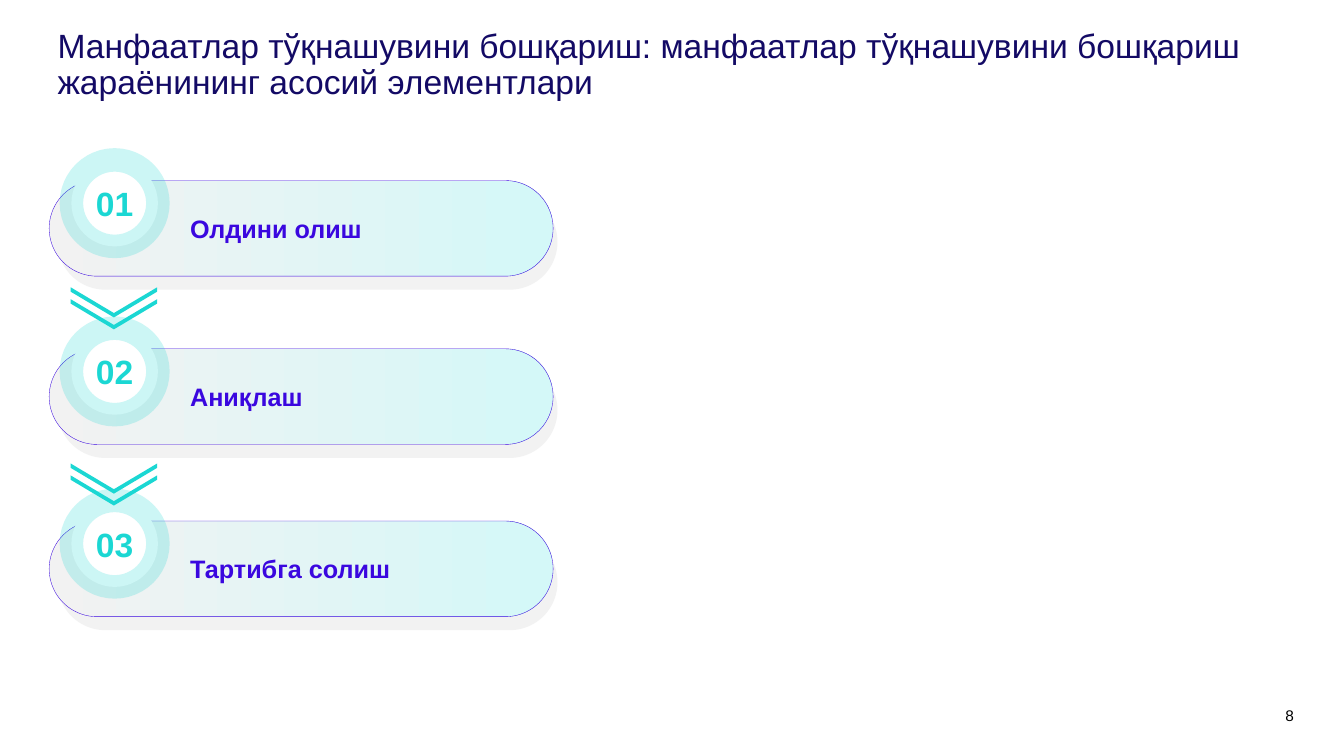
from lxml import etree
from pptx import Presentation
from pptx.dml.color import RGBColor
from pptx.enum.shapes import MSO_SHAPE
from pptx.enum.text import MSO_ANCHOR, MSO_AUTO_SIZE, PP_ALIGN
from pptx.oxml.ns import qn
from pptx.util import Cm, Pt

ROUNDED = MSO_SHAPE.ROUNDED_RECTANGLE
OVAL = MSO_SHAPE.OVAL
CHEVRON = MSO_SHAPE.CHEVRON
TOP, MIDDLE = MSO_ANCHOR.TOP, MSO_ANCHOR.MIDDLE
NO_AUTOFIT = MSO_AUTO_SIZE.NONE
LEFT, CENTER, RIGHT = PP_ALIGN.LEFT, PP_ALIGN.CENTER, PP_ALIGN.RIGHT

COLORS = {
    "navy": "130A65",
    "violet": "3A07DF",
    "teal": "1BD7D3",
    "aqua": "D4F8F8",
    "grey": "F2F2F2",
    "white": "FFFFFF",
    "black": "000000",
}
TITLE = ("Манфаатлар тўқнашувини бошқариш: манфаатлар тўқнашувини бошқариш "
         "жараёнининг асосий элементлари")
STEPS = [("Олдини олиш", 4.55), ("Аниқлаш", 8.79), ("Тартибга солиш", 13.13)]
ARROW_TOPS = [6.53, 10.97]
ARROW_GAP = 0.3
PILL_HEIGHT = 2.41
RING_SIZE = 2.18


def color(name):
    return RGBColor.from_string(COLORS[name])


class SlideBuilder:
    font_name = "Arial"

    def __init__(self, presentation):
        self.slide = presentation.slides.add_slide(presentation.slide_layouts[5])

    def set_text(self, shape, text, size, color_name, bold=False, align=LEFT,
                 anchor=MIDDLE, insets=(0, 0, 0, 0)):
        frame = shape.text_frame
        frame.text = text
        frame.word_wrap = True
        frame.auto_size = NO_AUTOFIT
        frame.vertical_anchor = anchor
        (frame.margin_left, frame.margin_top,
         frame.margin_right, frame.margin_bottom) = map(Cm, insets)
        paragraph = frame.paragraphs[0]
        paragraph.alignment = align
        font = paragraph.runs[0].font
        font.name = self.font_name
        font.size = Pt(size)
        font.bold = bold
        font.color.rgb = color(color_name)
        return paragraph

    def title(self, text):
        shape = self.slide.shapes.title
        shape.left, shape.top, shape.width, shape.height = map(Cm, (1.45, 0.74, 31.45, 1.22))
        self.set_text(shape, text, 24, "navy", anchor=TOP).line_spacing = 0.9

    def page_number(self, text):
        box = self.slide.shapes.add_textbox(Cm(31.52), Cm(17.83), Cm(1.09), Cm(0.41))
        self.set_text(box, text, 11, "black", align=RIGHT)

    def shape(self, parent, kind, box, fill, adjustment=None):
        shape = parent.shapes.add_shape(kind, *map(Cm, box))
        shape.shadow.inherit = False
        shape.fill.solid()
        shape.fill.fore_color.rgb = color(fill)
        shape.line.fill.background()
        if adjustment is not None:
            shape.adjustments[0] = adjustment
        return shape

    def outline(self, shape, color_name, width):
        shape.line.color.rgb = color(color_name)
        shape.line.width = Pt(width)

    def pill(self, text, top):
        group = self.slide.shapes.add_group_shape()
        self.shape(group, ROUNDED, (1.45, top + 0.34, 12.6, PILL_HEIGHT), "grey", 0.5)
        pill = self.shape(group, ROUNDED, (1.24, top, 12.7, PILL_HEIGHT), "grey", 0.5)
        pill.fill.gradient()
        pill.fill.gradient_angle = 0
        for stop, name in zip(pill.fill.gradient_stops, ("grey", "aqua")):
            stop.color.rgb = color(name)
        self.outline(pill, "violet", 0.25)
        self.set_text(pill, text, 18, "violet", bold=True, insets=(3.2, 0.13, 0.25, 0.13))

    def number_ring(self, text, top):
        ring = self.shape(self.slide, OVAL, (1.8, top, RING_SIZE, RING_SIZE), "white")
        self.outline(ring, "teal", 16.75)
        line_color = ring.element.spPr.find(qn("a:ln")).find(".//" + qn("a:srgbClr"))
        etree.SubElement(line_color, qn("a:alpha")).set("val", "21000")
        self.set_text(ring, text, 24, "teal", bold=True, align=CENTER)

    def double_arrow(self, top):
        group = self.slide.shapes.add_group_shape()
        for index in range(2):
            box = (2.49, top + index * ARROW_GAP, 0.76, RING_SIZE)
            self.shape(group, CHEVRON, box, "teal", 0.854).rotation = 90


def main():
    presentation = Presentation()
    presentation.slide_width = Cm(33.87)
    presentation.slide_height = Cm(19.05)
    builder = SlideBuilder(presentation)
    builder.title(TITLE)
    builder.page_number("8")
    for number, (text, top) in enumerate(STEPS, start=1):
        builder.pill(text, top)
        builder.number_ring(f"{number:02d}", top - 0.52)
    for top in ARROW_TOPS:
        builder.double_arrow(top)
    presentation.save("out.pptx")


if __name__ == "__main__":
    main()
